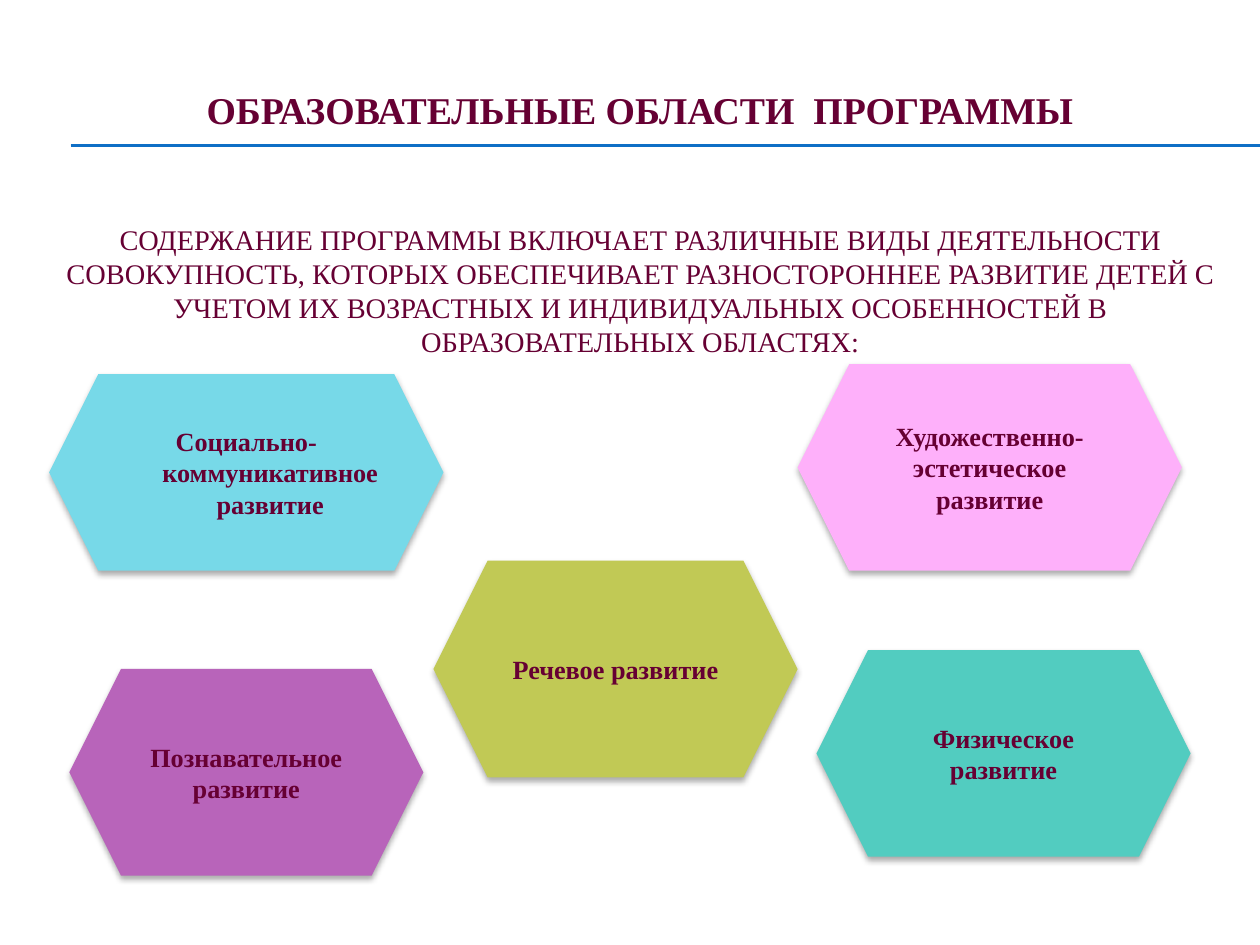
from dataclasses import dataclass

from lxml.etree import SubElement
from pptx import Presentation
from pptx.dml.color import RGBColor
from pptx.enum.shapes import MSO_CONNECTOR as CONNECTOR, MSO_SHAPE as SHAPE
from pptx.enum.text import MSO_ANCHOR as ANCHOR, PP_ALIGN as ALIGN
from pptx.oxml.ns import qn
from pptx.util import Inches, Pt


@dataclass(frozen=True)
class Theme:
    font: str = "Times New Roman"
    text: str = "660033"
    rule: str = "0F6FC6"
    social: str = "77D9E8"
    cognitive: str = "B864BA"
    speech: str = "C1C955"
    physical: str = "52CCC0"
    artistic: str = "FEB0FA"
    title_size: float = 21.6
    intro_size: float = 16.2
    area_size: float = 15


THEME = Theme()


def write_text(frame, text, size, bold):
    frame.word_wrap = True
    frame.vertical_anchor = ANCHOR.MIDDLE
    paragraph = frame.paragraphs[0]
    paragraph.alignment = ALIGN.CENTER
    run = paragraph.add_run()
    run.text = text
    run.font.name = THEME.font
    run.font.size = Pt(size)
    run.font.bold = bold
    run.font.color.rgb = RGBColor.from_string(THEME.text)
    return paragraph


def add_heading(slide, text, top, height, size, bold=False):
    heading = slide.shapes.add_textbox(
        Inches(0.33), Inches(top), Inches(9.5), Inches(height))
    write_text(heading.text_frame, text, size, bold)


def add_rule(slide, y):
    rule = slide.shapes.add_connector(
        CONNECTOR.STRAIGHT, Inches(0.56), Inches(y), Inches(10), Inches(y))
    rule.line.color.rgb = RGBColor.from_string(THEME.rule)
    rule.line.width = Pt(0.75)
    SubElement(rule._element.spPr, qn("a:effectLst"))


def add_soft_shadow(shape):
    shape.shadow.inherit = False
    effects = shape._element.spPr.find(qn("a:effectLst"))
    shadow = SubElement(effects, qn("a:outerShdw"), blurRad=str(Pt(3.5)),
                        dist=str(Pt(2.2)), dir="5400000", rotWithShape="0")
    color = SubElement(shadow, qn("a:srgbClr"), val="000000")
    SubElement(color, qn("a:alpha"), val="32000")


def add_area(slide, text, fill, left, top, width, height, hanging=0):
    area = slide.shapes.add_shape(
        SHAPE.HEXAGON, Inches(left), Inches(top), Inches(width), Inches(height))
    area.fill.solid()
    area.fill.fore_color.rgb = RGBColor.from_string(fill)
    area.line.fill.background()
    add_soft_shadow(area)
    paragraph = write_text(area.text_frame, text, THEME.area_size, True)
    if hanging:
        indent = Inches(hanging)
        properties = paragraph._p.get_or_add_pPr()
        properties.set("marL", str(indent))
        properties.set("indent", str(-indent))


def main():
    prs = Presentation()
    prs.slide_width, prs.slide_height = Inches(10), Inches(7.5)
    slide = prs.slides.add_slide(prs.slide_layouts[6])

    # Double rule under the title
    for y in (1.15, 1.16):
        add_rule(slide, y)

    # Title and introduction
    add_heading(slide, "ОБРАЗОВАТЕЛЬНЫЕ ОБЛАСТИ  ПРОГРАММЫ",
                0.62, 0.5, THEME.title_size, bold=True)
    add_heading(slide,
                "СОДЕРЖАНИЕ ПРОГРАММЫ ВКЛЮЧАЕТ РАЗЛИЧНЫЕ ВИДЫ ДЕЯТЕЛЬНОСТИ "
                "СОВОКУПНОСТЬ, КОТОРЫХ ОБЕСПЕЧИВАЕТ РАЗНОСТОРОННЕЕ РАЗВИТИЕ "
                "ДЕТЕЙ С УЧЕТОМ ИХ ВОЗРАСТНЫХ И ИНДИВИДУАЛЬНЫХ ОСОБЕННОСТЕЙ "
                "В ОБРАЗОВАТЕЛЬНЫХ ОБЛАСТЯХ:",
                1.7, 1.2, THEME.intro_size)

    # Educational areas
    add_area(slide, "Социально-коммуникативное развитие", THEME.social,
             0.39, 2.97, 3.13, 1.56, hanging=0.38)
    add_area(slide, "Познавательное развитие", THEME.cognitive,
             0.55, 5.31, 2.81, 1.64)
    add_area(slide, "Речевое развитие", THEME.speech,
             3.44, 4.45, 2.89, 1.72)
    add_area(slide, "Физическое развитие", THEME.physical,
             6.48, 5.16, 2.97, 1.64)
    add_area(slide, "Художественно-эстетическое развитие", THEME.artistic,
             6.33, 2.89, 3.05, 1.64)

    prs.save("out.pptx")


if __name__ == "__main__":
    main()
